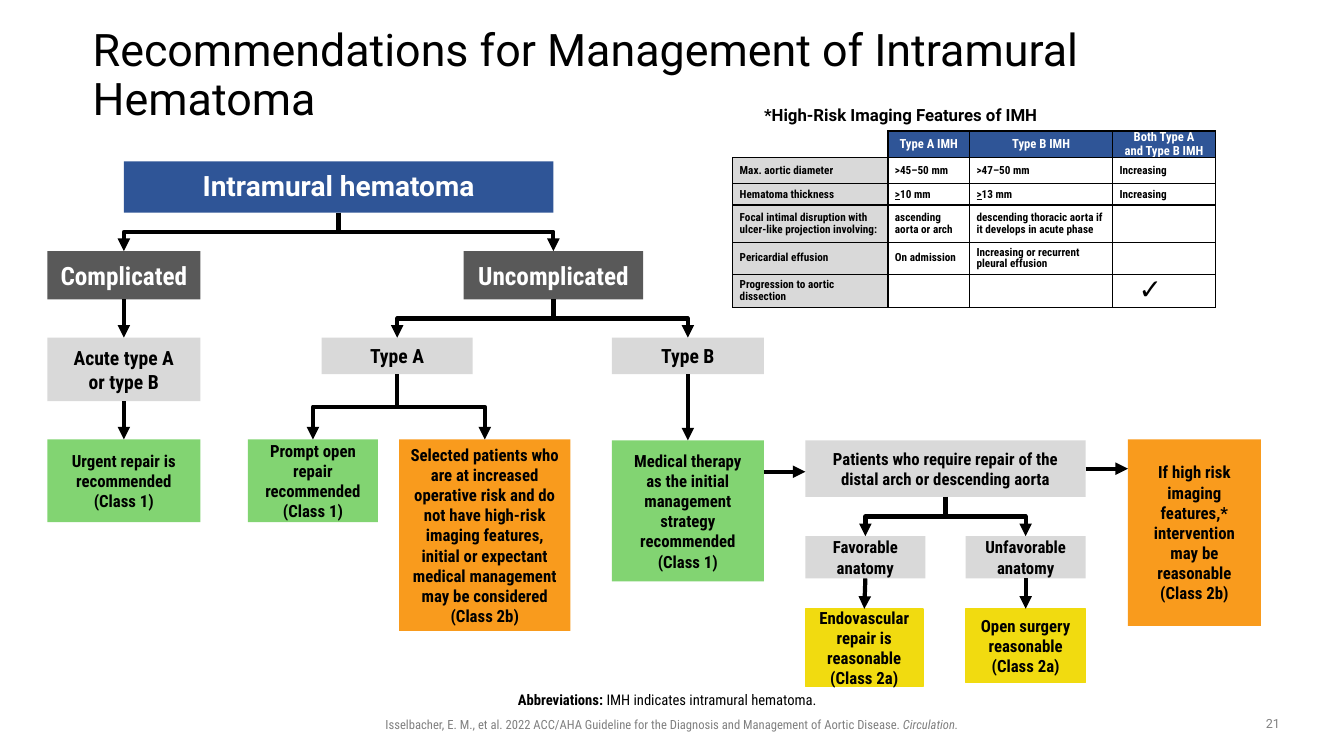
from lxml import etree
from pptx import Presentation
from pptx import util as u
from pptx.dml.color import RGBColor
from pptx.enum import shapes, text
from pptx.oxml import ns

COLORS = {
    "black": "000000", "white": "FFFFFF", "blue": "2F5597", "charcoal": "595959",
    "silver": "D9D9D9", "gray": "808080", "green": "82D472", "orange": "F99B1D",
    "yellow": "F1DB10", "gold": "F0DB0E",
}
WIDE, NARROW = "Roboto", "Roboto Condensed"
LEFT, CENTER = text.PP_ALIGN.LEFT, text.PP_ALIGN.CENTER
MIDDLE, TOP = text.MSO_ANCHOR.MIDDLE, text.MSO_ANCHOR.TOP
DEFAULT_INSETS = (7.2, 3.6, 7.2, 3.6)
NO_INSETS = (0, 0, 0, 0)


def rgb(name):
    return RGBColor.from_string(COLORS[name])


def write(frame, content, size=12, font=NARROW, color="black", bold=False,
          align=CENTER, spacing=None):
    lines = content.split("\n") if isinstance(content, str) else [content]
    for index, line in enumerate(lines):
        paragraph = frame.add_paragraph() if index else frame.paragraphs[0]
        paragraph.alignment = align
        if spacing:
            paragraph.line_spacing = spacing
        if not line:
            etree.SubElement(paragraph._p, ns.qn("a:endParaRPr"), sz=str(size * 100))
            continue
        for words, extra in [(line, {})] if isinstance(line, str) else line:
            run = paragraph.add_run()
            run.text = words
            run.font.name, run.font.size, run.font.bold = font, u.Pt(size), bold
            run.font.color.rgb = rgb(color)
            for key, value in extra.items():
                setattr(run.font, key, value)


class Board:
    def __init__(self, width, height):
        self.deck = Presentation()
        self.deck.slide_width, self.deck.slide_height = u.Pt(width), u.Pt(height)
        self.slide = self.deck.slides.add_slide(self.deck.slide_layouts[5])
        self.shapes = self.slide.shapes

    def fit(self, frame, insets, anchor):
        frame.word_wrap = True
        frame.auto_size = text.MSO_AUTO_SIZE.NONE
        frame.vertical_anchor = anchor
        (frame.margin_left, frame.margin_top,
         frame.margin_right, frame.margin_bottom) = map(u.Pt, insets)

    def title(self, at, content, **fmt):
        heading = self.shapes.title
        heading.left, heading.top, heading.width, heading.height = map(u.Pt, at)
        self.fit(heading.text_frame, NO_INSETS, MIDDLE)
        write(heading.text_frame, content, **fmt)

    def label(self, at, content, insets=DEFAULT_INSETS, anchor=TOP, **fmt):
        frame = self.shapes.add_textbox(*map(u.Pt, at)).text_frame
        self.fit(frame, insets, anchor)
        write(frame, content, **fmt)

    def box(self, at, fill, content, edge=None, insets=DEFAULT_INSETS, **fmt):
        step = self.shapes.add_shape(shapes.MSO_SHAPE.RECTANGLE, *map(u.Pt, at))
        step.shadow.inherit = False
        step.fill.solid()
        step.fill.fore_color.rgb = rgb(fill)
        if edge:
            step.line.color.rgb = rgb(edge)
            step.line.width = u.Pt(1)
        else:
            step.line.fill.background()
        self.fit(step.text_frame, insets, MIDDLE)
        write(step.text_frame, content, bold=True, **fmt)
        return step

    def arrow(self, kind, *ends):
        arrow = self.shapes.add_connector(kind, *map(int, ends))
        arrow.line.color.rgb = rgb("black")
        arrow.line.width = u.Pt(3)
        props = arrow._element.spPr
        etree.SubElement(props.find(ns.qn("a:ln")), ns.qn("a:tailEnd"), type="triangle")
        etree.SubElement(props, ns.qn("a:effectLst"))
        return props.find(ns.qn("a:xfrm"))

    def down(self, parent, *children):
        x1, y1 = parent.left + parent.width / 2, parent.top + parent.height
        for child in children:
            x2, y2 = child.left + child.width / 2, child.top
            if abs(x2 - x1) < u.Pt(3):
                self.arrow(shapes.MSO_CONNECTOR.STRAIGHT, x1, y1, x2, y2)
                continue
            mid_x, mid_y = (x1 + x2) / 2, (y1 + y2) / 2
            side = 1 if x2 < x1 else -1
            half_w, half_h = side * (y2 - y1) / 2, abs(x2 - x1) / 2
            frame = self.arrow(shapes.MSO_CONNECTOR.ELBOW, mid_x - half_w, mid_y - half_h,
                               mid_x + half_w, mid_y + half_h)
            frame.set("rot", str((90 if side == 1 else 270) * 60000))

    def across(self, source, target, y):
        self.arrow(shapes.MSO_CONNECTOR.STRAIGHT, source.left + source.width, u.Pt(y),
                   target.left, u.Pt(y))

    def cell(self, cell, content, fill, sides="LRTB", indent=0, **fmt):
        cell.margin_left, cell.margin_right = u.Pt(5 + indent), u.Pt(5)
        cell.margin_top = cell.margin_bottom = 0
        cell.vertical_anchor = MIDDLE
        props = cell._tc.get_or_add_tcPr()
        for side in "LRTB":
            border = etree.SubElement(props, ns.qn(f"a:ln{side}"), w="12700")
            if side in sides:
                ink = etree.SubElement(border, ns.qn("a:solidFill"))
                etree.SubElement(ink, ns.qn("a:srgbClr"), val=COLORS["black"])
            else:
                etree.SubElement(border, ns.qn("a:noFill"))
        cell.fill.solid()
        cell.fill.fore_color.rgb = rgb(fill)
        write(cell.text_frame, content, spacing=0.9, **fmt)

    def table(self, at, widths, heights, rows):
        grid = self.shapes.add_table(len(heights), len(widths), *map(u.Pt, at)).table
        grid.first_row = grid.horz_banding = False
        for column, width in zip(grid.columns, widths):
            column.width = u.Pt(width)
        for r, (height, row) in enumerate(zip(heights, rows)):
            grid.rows[r].height = u.Pt(height)
            for c, content in enumerate(row):
                fmt = dict(fill="silver" if c == 0 else "white", size=8, bold=True, align=LEFT)
                if r == 0:
                    fmt.update(size=9, align=CENTER, color="white", fill="blue")
                    if c == 0:
                        fmt.update(fill="white", sides="RB")
                elif content == "✓":
                    fmt.update(size=20, bold=False, indent=13.5)
                self.cell(grid.cell(r, c), content, **fmt)


def main():
    board = Board(960, 540)
    board.title((66.2, 28.8, 828, 51.8), "Recommendations for Management of Intramural Hematoma",
                size=32, font=WIDE, align=LEFT, spacing=0.9)

    hematoma = board.box((88.5, 115.2, 306.8, 36.7), "blue", "Intramural hematoma",
                         insets=NO_INSETS, size=20, font=WIDE, color="white", spacing=0.9)
    complicated = board.box((33.8, 179.3, 109.4, 34.6), "charcoal", "Complicated",
                            size=18, color="white")
    uncomplicated = board.box((331.2, 179.3, 128.2, 34.6), "charcoal", "Uncomplicated",
                              size=18, color="white")
    acute = board.box((33.8, 241.2, 109.4, 45.4), "silver", "Acute type A\nor type B", size=14)
    type_a = board.box((229.7, 241.2, 108, 26), "silver", "Type A", size=14)
    type_b = board.box((437, 241.2, 108.7, 26), "silver", "Type B", size=14)
    urgent = board.box((33.8, 313.9, 109.4, 59), "green",
                       "Urgent repair is\nrecommended\n(Class 1)")
    prompt = board.box((177.1, 313.9, 92.9, 59), "green",
                       "Prompt open repair\nrecommended\n(Class 1)")
    selected = board.box((285.1, 313.9, 122.4, 136.8), "orange",
                         "Selected patients who are at increased operative risk and do not have "
                         "high-risk imaging features, initial or expectant medical management\n"
                         "may be considered\n(Class 2b)")
    medical = board.box((437, 314.6, 108.7, 100.8), "green",
                        "Medical therapy\nas the initial\nmanagement strategy\n"
                        "recommended (Class 1)")
    repair = board.box((575.3, 314.6, 200.2, 40.3), "silver",
                       "Patients who require repair of the distal arch or descending aorta")
    favorable = board.box((575.3, 383, 85.7, 30.2), "silver", "Favorable\nanatomy")
    unfavorable = board.box((689.8, 383, 85.7, 30.2), "silver", "Unfavorable\nanatomy")
    endovascular = board.box((575.3, 434.9, 84.2, 55.4), "yellow",
                             "Endovascular repair is\nreasonable\n(Class 2a)", edge="gold")
    surgery = board.box((689.8, 434.9, 85.7, 52.6), "yellow",
                        "Open surgery\nreasonable\n(Class 2a)", edge="gold")
    high_risk = board.box((805.7, 313.9, 95, 133.2), "orange",
                          "If high risk imaging\nfeatures,* intervention\n"
                          "may be reasonable\n(Class 2b)")

    for parent, *children in (
        (hematoma, complicated, uncomplicated), (complicated, acute), (acute, urgent),
        (uncomplicated, type_a, type_b), (type_a, prompt, selected), (type_b, medical),
        (repair, favorable, unfavorable), (favorable, endovascular), (unfavorable, surgery),
    ):
        board.down(parent, *children)
    board.across(medical, repair, 337)
    board.across(repair, high_risk, 334.8)

    board.label((545.8, 71.3, 345.6, 23.8), "*High-Risk Imaging Features of IMH",
                insets=NO_INSETS, anchor=MIDDLE, font=WIDE, bold=True, align=LEFT, spacing=0.9)
    at_least = (">", {"underline": True})
    board.table((523.4, 93.6, 344.8, 126), (110.9, 58.3, 102.2, 73.4),
                (18.7, 18.7, 15.1, 26.6, 23, 23.8), (
        ("", "Type A IMH", "Type B IMH", "Both Type A\nand Type B IMH"),
        ("Max. aortic diameter", ">45–50 mm", ">47–50 mm", "Increasing"),
        ("Hematoma thickness", [at_least, ("10 mm", {})], [at_least, ("13 mm", {})],
         "Increasing"),
        ("Focal intimal disruption with ulcer-like projection involving:",
         "ascending aorta or arch", "descending thoracic aorta if it develops in acute phase", ""),
        ("Pericardial effusion", "On admission", "Increasing or recurrent pleural effusion", ""),
        ("Progression to aortic dissection", "", "", "✓"),
    ))

    board.label((150.5, 491, 659.5, 18.7),
                [("Abbreviations: ", {"bold": True}), ("IMH indicates intramural hematoma.", {})],
                insets=(0, 3.6, 7.2, 3.6), size=10.5, spacing=0.9)
    board.label((130.3, 508.3, 699.1, 18),
                [("Isselbacher, E. M., et al. 2022 ACC/AHA Guideline for the Diagnosis and "
                  "Management of Aortic Disease. ", {}), ("Circulation.", {"italic": True})],
                size=9, color="gray")
    board.label((894.2, 507.6, 30.2, 18.7), "21", size=9, font=WIDE, color="gray")
    board.deck.save("out.pptx")


if __name__ == "__main__":
    main()
